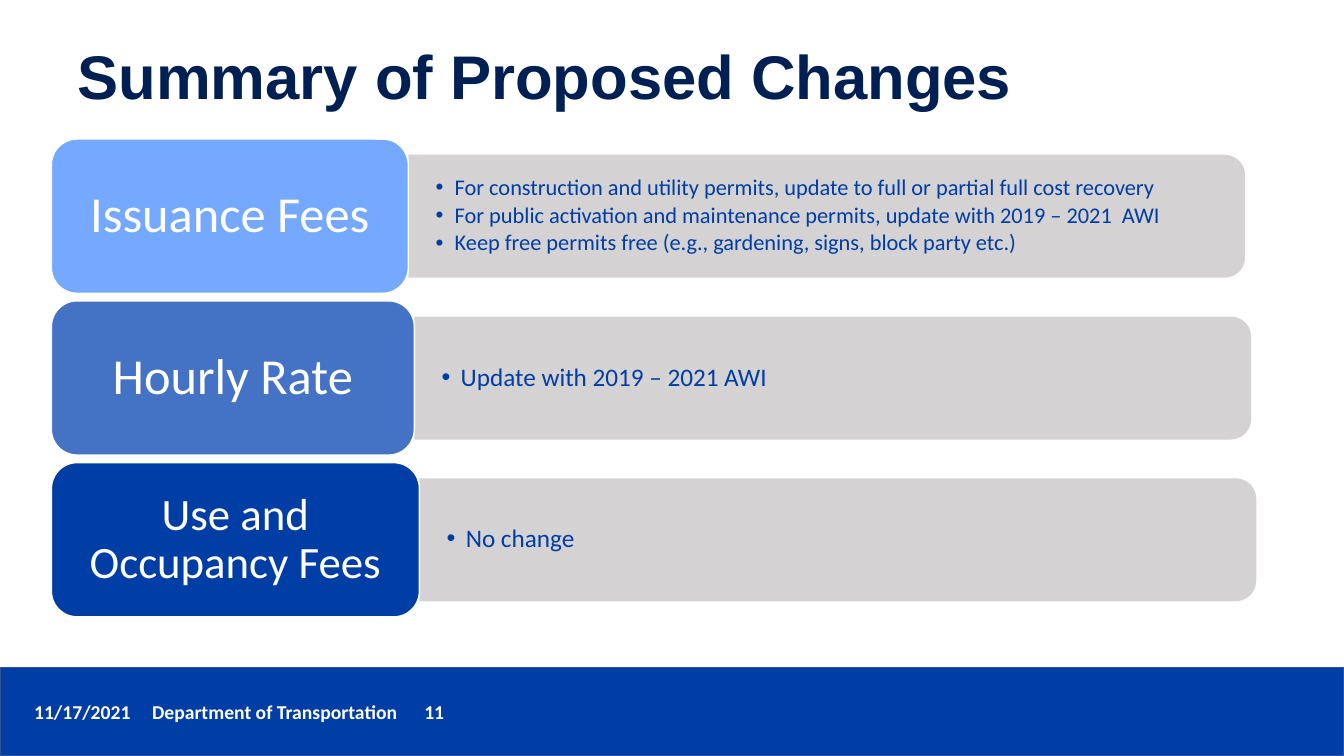
from lxml import etree
from pptx import Presentation
from pptx.dml.color import RGBColor
from pptx.enum import shapes, text
from pptx.oxml import ns
from pptx.util import Inches, Pt

TITLE = "Summary of Proposed Changes"
FOOTER = "11/17/2021\tDepartment of Transportation\t11"
FOOTER_TABS = (1.17, 3.87)
BLUE, NAVY, WHITE, GREY = "003DA5", "001F52", "FFFFFF", "D0CECE"

# label, label fill, label size, label width, bullet size, bullets
ROWS = [
    ("Issuance Fees", "75A8FF", 36, 3.54, 16, [
        "For construction and utility permits, update to full or partial full cost recovery",
        "For public activation and maintenance permits, update with 2019 – 2021  AWI",
        "Keep free permits free (e.g., gardening, signs, block party etc.)",
    ]),
    ("Hourly Rate", "4472C4", 36, 3.6, 18, ["Update with 2019 – 2021 AWI"]),
    ("Use and Occupancy Fees", BLUE, 32, 3.65, 18, ["No change"]),
]
ROW_LEFT, ROW_TOP, ROW_PITCH = 0.51, 1.38, 1.605
LABEL_HEIGHT = 1.53
BAR_WIDTH, BAR_HEIGHT = 8.3, 1.22
BULLET_INDENT = 0.19


def color(hex_value):
    return RGBColor.from_string(hex_value)


def add_box(kind, left, top, width, height, fill, line=None):
    shape = slide.shapes.add_shape(
        kind, Inches(left), Inches(top), Inches(width), Inches(height))
    shape.shadow.inherit = False
    shape.fill.solid()
    shape.fill.fore_color.rgb = color(fill)
    if line:
        shape.line.color.rgb = color(line)
        shape.line.width = Pt(1)
    else:
        shape.line.fill.background()
    return shape


def add_text_box(left, top, width, height):
    return slide.shapes.add_textbox(
        Inches(left), Inches(top), Inches(width), Inches(height))


def set_frame(shape, side=0.1, edge=0.05):
    """Wrap and centre the text vertically, with the given insets."""
    frame = shape.text_frame
    frame.word_wrap = True
    frame.vertical_anchor = text.MSO_ANCHOR.MIDDLE
    frame.margin_left = frame.margin_right = Inches(side)
    frame.margin_top = frame.margin_bottom = Inches(edge)
    return frame


def write(paragraph, words, size, hex_value, font="Calibri", bold=False, spacing=0.9):
    paragraph.line_spacing = spacing
    run = paragraph.add_run()
    run.text = words
    run.font.name = font
    run.font.size = Pt(size)
    run.font.bold = bold
    run.font.color.rgb = color(hex_value)


def add_bullet(paragraph):
    properties = paragraph._p.get_or_add_pPr()
    properties.set("marL", str(Inches(BULLET_INDENT)))
    properties.set("indent", str(-Inches(BULLET_INDENT)))
    etree.SubElement(properties, ns.qn("a:buFont"), typeface="Arial")
    etree.SubElement(properties, ns.qn("a:buChar"), char="•")


def add_tabs(paragraph, stops):
    tabs = etree.SubElement(paragraph._p.get_or_add_pPr(), ns.qn("a:tabLst"))
    for stop in stops:
        etree.SubElement(tabs, ns.qn("a:tab"), pos=str(Inches(stop)), algn="l")


def add_bar(left, middle):
    """Draw a bar rounded at its right end: a top-rounded shape turned by 90 degrees."""
    bar = add_box(shapes.MSO_SHAPE.ROUND_2_SAME_RECTANGLE,
                  left + (BAR_WIDTH - BAR_HEIGHT) / 2, middle - BAR_WIDTH / 2,
                  BAR_HEIGHT, BAR_WIDTH, GREY)
    bar.rotation = 90
    rgb = bar.fill._xPr.find(".//" + ns.qn("a:srgbClr"))
    etree.SubElement(rgb, ns.qn("a:alpha"), val="90000")


def add_row(index, label, fill, label_size, label_width, bullet_size, bullets):
    top = ROW_TOP + index * ROW_PITCH
    middle = top + LABEL_HEIGHT / 2
    bar_left = ROW_LEFT + label_width
    add_bar(bar_left, middle)

    frame = set_frame(add_text_box(bar_left, middle - 0.55, 8.24, 1.1), 0.27, 0.14)
    for number, bullet in enumerate(bullets):
        paragraph = frame.add_paragraph() if number else frame.paragraphs[0]
        add_bullet(paragraph)
        paragraph.space_after = Pt(bullet_size * 0.15)
        write(paragraph, bullet, bullet_size, BLUE)

    box = add_box(shapes.MSO_SHAPE.ROUNDED_RECTANGLE,
                  ROW_LEFT, top, label_width, LABEL_HEIGHT, fill, WHITE)
    paragraph = set_frame(box, 0.14, 0.07).paragraphs[0]
    paragraph.alignment = text.PP_ALIGN.CENTER
    write(paragraph, label, label_size, WHITE)


presentation = Presentation()
presentation.slide_width = Inches(13.33)
presentation.slide_height = Inches(7.5)
slide = presentation.slides.add_slide(presentation.slide_layouts[6])

add_box(shapes.MSO_SHAPE.RECTANGLE, 0, 6.62, 13.33, 0.88, BLUE, "31538F")
footer = set_frame(add_text_box(0.24, 6.89, 10.06, 0.34)).paragraphs[0]
add_tabs(footer, FOOTER_TABS)
write(footer, FOOTER, 14, WHITE, bold=True, spacing=1.0)

title = set_frame(add_text_box(0.67, 0.06, 11.5, 1.45)).paragraphs[0]
write(title, TITLE, 44, NAVY, font="Arial", bold=True)

for index, row in enumerate(ROWS):
    add_row(index, *row)

presentation.save("out.pptx")
